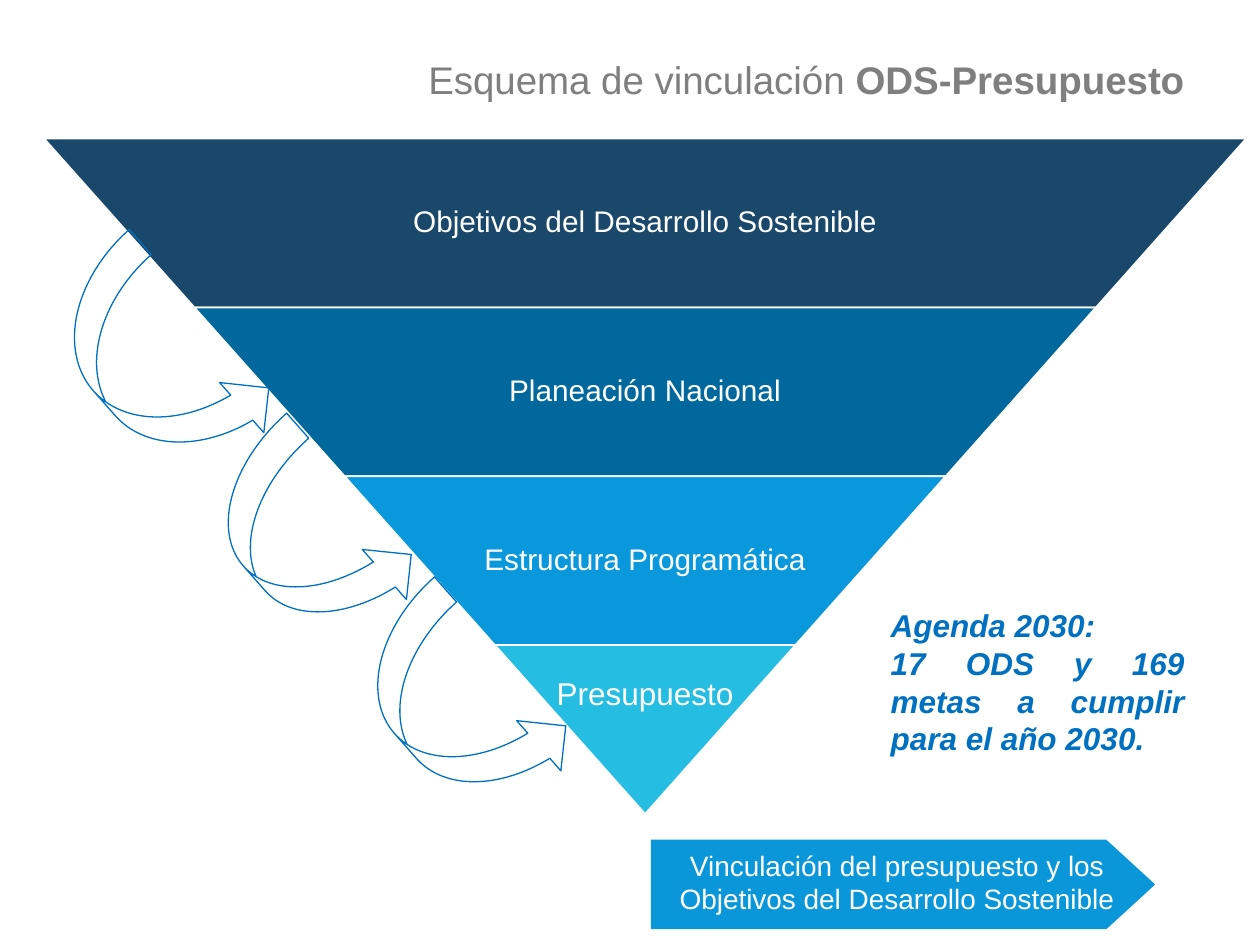
import pptx
import pptx.util
import pptx.dml.color
import pptx.enum.shapes
import pptx.enum.text

Inches, Pt = pptx.util.Inches, pptx.util.Pt
RGBColor = pptx.dml.color.RGBColor
SHAPE = pptx.enum.shapes.MSO_SHAPE
ALIGN = pptx.enum.text.PP_ALIGN
ANCHOR = pptx.enum.text.MSO_ANCHOR

WHITE = RGBColor(0xFF, 0xFF, 0xFF)
GREY = RGBColor(0x7F, 0x7F, 0x7F)
BLUE = RGBColor(0x00, 0x70, 0xC0)
BANNER_BLUE = RGBColor(0x0A, 0x97, 0xD9)
NAVY = RGBColor(0x19, 0x48, 0x6A)
DEEP_BLUE = RGBColor(0x00, 0x68, 0x9D)
BRIGHT_BLUE = RGBColor(0x09, 0x98, 0xDC)
CYAN = RGBColor(0x26, 0xBD, 0xE2)


def add_outlined(kind, left, top, width, height, fill, line, weight):
    """Add a shadowless preset shape; a fill of None leaves it hollow."""
    shape = page.shapes.add_shape(
        kind, Inches(left), Inches(top), Inches(width), Inches(height))
    shape.shadow.inherit = False
    if fill is None:
        shape.fill.background()
    else:
        shape.fill.solid()
        shape.fill.fore_color.rgb = fill
    shape.line.color.rgb = line
    shape.line.width = Pt(weight)
    return shape


def write_text(box, lines, size, color, align, anchor, insets):
    """Fill a box with paragraphs; insets are left, top, right, bottom."""
    frame = box.text_frame
    frame.word_wrap = True
    frame.vertical_anchor = anchor
    (frame.margin_left, frame.margin_top,
     frame.margin_right, frame.margin_bottom) = map(Inches, insets)
    frame.text = "\n".join(lines)
    for para in frame.paragraphs:
        para.alignment = align
        para.font.name = "Arial"
        para.font.size = Pt(size)
        para.font.color.rgb = color
    return frame.paragraphs


deck = pptx.Presentation()
deck.slide_width, deck.slide_height = Inches(10), Inches(7.5)
page = deck.slides.add_slide(deck.slide_layouts[5])

# Title
title = page.shapes.title
title.left, title.top = Inches(0.5), Inches(0.3)
title.width, title.height = Inches(9), Inches(0.7)
para = write_text(title, ["Esquema de vinculación "], 22, GREY,
                  ALIGN.RIGHT, ANCHOR.MIDDLE, (0.1, 0.05, 0.1, 0.05))[0]
para.line_spacing = 0.9
span = para.add_run()
span.text = "ODS-Presupuesto"
span.font.bold = True

# Banner at the foot
banner = add_outlined(SHAPE.PENTAGON, 5.17, 6.67, 3.99, 0.7,
                      BANNER_BLUE, BANNER_BLUE, 0.75)
banner.adjustments[0] = 0.545
write_text(banner,
           ["Vinculación del presupuesto y los Objetivos del Desarrollo Sostenible"],
           16, WHITE, ALIGN.CENTER, ANCHOR.MIDDLE, (0.1, 0.12, 0, 0.16))

# Inverted pyramid: each level is a quarter of the full width narrower
CENTER, PYRAMID_TOP, FULL_WIDTH, LEVEL_HEIGHT = 5.12, 1.1, 9.54, 1.34
levels = [
    ("Objetivos del Desarrollo Sostenible", NAVY, 17, 0.65, 0, ANCHOR.MIDDLE),
    ("Planeación Nacional", DEEP_BLUE, 17, 0.65, 0, ANCHOR.MIDDLE),
    ("Estructura Programática", BRIGHT_BLUE, 17, 0.65, 0, ANCHOR.MIDDLE),
    ("Presupuesto", CYAN, 18, 1, 0.27, ANCHOR.TOP),
]
for index, (label, color, size, share, inset, anchor) in enumerate(levels):
    width = FULL_WIDTH * (len(levels) - index) / len(levels)
    top = PYRAMID_TOP + index * LEVEL_HEIGHT
    level = add_outlined(SHAPE.TRAPEZOID, CENTER - width / 2, top,
                         width, LEVEL_HEIGHT, color, WHITE, 1)
    level.rotation = 180
    level.adjustments[0] = 0.89
    text_width = width * share
    box = page.shapes.add_textbox(
        Inches(CENTER - text_width / 2), Inches(top),
        Inches(text_width), Inches(LEVEL_HEIGHT))
    para = write_text(box, [label], size, WHITE, ALIGN.CENTER, anchor,
                      (0.02, inset or 0.02, 0.02, 0.02))[0]
    para.line_spacing = 0.9

# Arrows from each level to the next
for left, top, height in [(0.74, 1.93, 1.94), (3.13, 4.7, 1.84), (1.93, 3.41, 1.76)]:
    arrow = add_outlined(SHAPE.CURVED_RIGHT_ARROW, left, top, 1.06, height,
                         None, BLUE, 0.75)
    arrow.rotation = 318.6

# Agenda note
note = page.shapes.add_textbox(Inches(6.97), Inches(4.76), Inches(2.53), Inches(1.31))
for para in write_text(
        note, ["Agenda 2030:", "17 ODS y 169 metas a cumplir para el año 2030."],
        18, BLUE, ALIGN.JUSTIFY, ANCHOR.TOP, (0.1, 0.05, 0.1, 0.05)):
    para.font.bold = True
    para.font.italic = True

deck.save("out.pptx")
